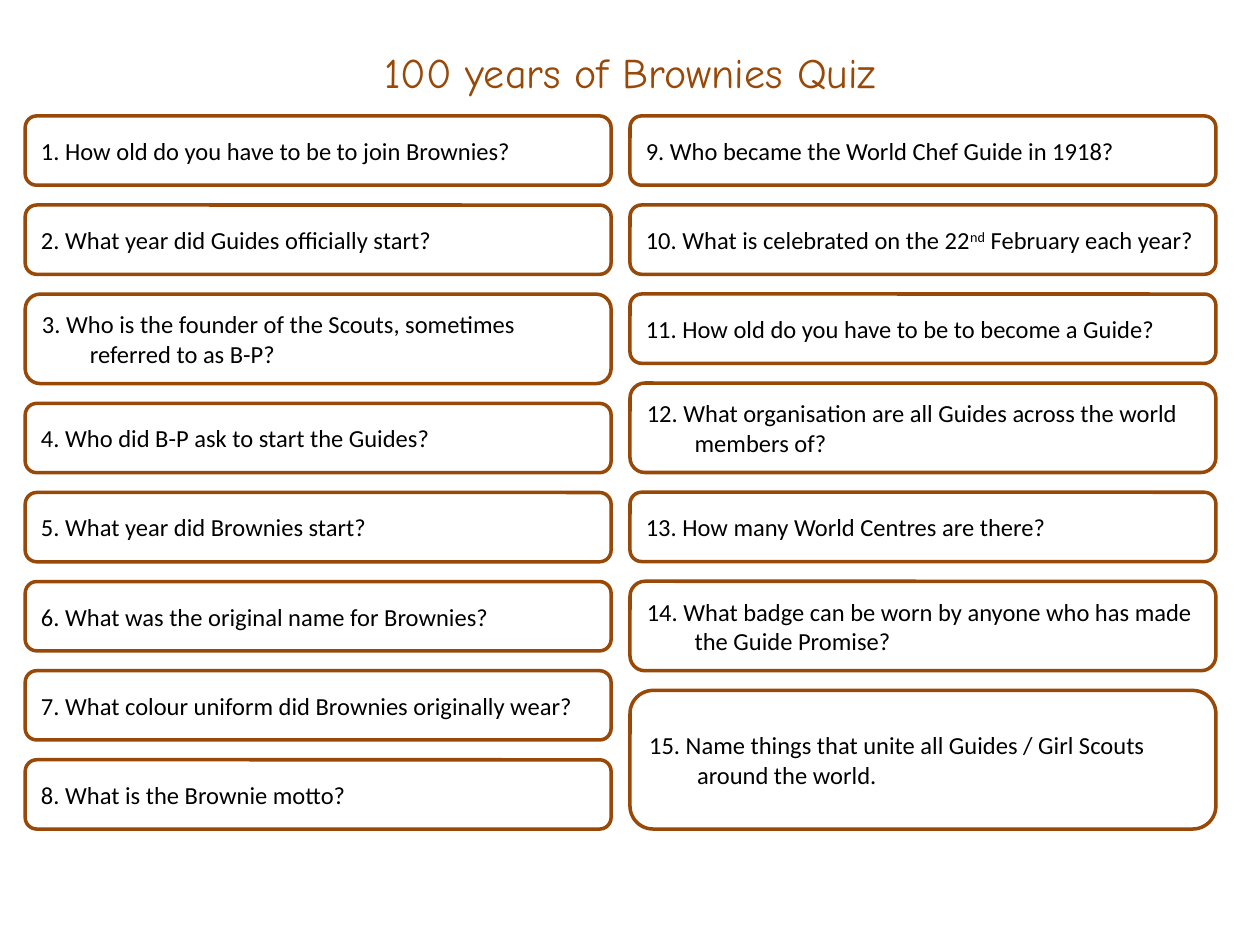
from pptx import Presentation
from pptx.dml.color import RGBColor
from pptx.enum.shapes import MSO_SHAPE as Shape
from pptx.enum.text import MSO_ANCHOR as Anchor, PP_ALIGN as Align
from pptx.util import Inches, Pt

BROWN = RGBColor(0x98, 0x48, 0x07)
BLACK = RGBColor(0, 0, 0)
TOP, BOTTOM, WIDTH = 0.92, 6.58, 4.65
ONE, TWO, TALL = 0.55, 0.71, 1.1

COLUMNS = [
    (0.2, [
        ("How old do you have to be to join Brownies?", ONE),
        ("What year did Guides officially start?", ONE),
        ("Who is the founder of the Scouts, sometimes referred to as B-P?", TWO),
        ("Who did B-P ask to start the Guides?", ONE),
        ("What year did Brownies start?", ONE),
        ("What was the original name for Brownies?", ONE),
        ("What colour uniform did Brownies originally wear?", ONE),
        ("What is the Brownie motto?", ONE),
    ]),
    (5, [
        ("Who became the World Chef Guide in 1918?", ONE),
        ("What is celebrated on the 22^nd^ February each year?", ONE),
        ("How old do you have to be to become a Guide?", ONE),
        ("What organisation are all Guides across the world members of?", TWO),
        ("How many World Centres are there?", ONE),
        ("What badge can be worn by anyone who has made the Guide Promise?", TWO),
        ("Name things that unite all Guides / Girl Scouts around the world.", TALL),
    ]),
]


def style(para, name, size, color, align):
    para.font.name = name
    para.font.size = Pt(size)
    para.font.color.rgb = color
    para.alignment = align


deck = Presentation()
deck.slide_width, deck.slide_height = Inches(10), Inches(7.5)
slide = deck.slides.add_slide(deck.slide_layouts[5])

title = slide.shapes.title
title.left, title.top = Inches(0.75), Inches(0.29)
title.width, title.height = Inches(8.5), Inches(0.55)
title.text_frame.text = "100 years of Brownies Quiz"
title.text_frame.vertical_anchor = Anchor.MIDDLE
style(title.text_frame.paragraphs[0], "Comic Neue", 24, BROWN, Align.CENTER)

number = 1
for left, quiz in COLUMNS:
    gap = (BOTTOM - TOP - sum(height for _, height in quiz)) / (len(quiz) - 1)
    top = TOP
    for text, height in quiz:
        box = slide.shapes.add_shape(Shape.ROUNDED_RECTANGLE, Inches(left), Inches(top),
                                     Inches(WIDTH), Inches(height))
        box.shadow.inherit = False
        box.fill.background()
        box.line.color.rgb = BROWN
        box.line.width = Pt(2)
        frame = box.text_frame
        frame.word_wrap = True
        frame.vertical_anchor = Anchor.MIDDLE
        para = frame.paragraphs[0]
        style(para, "Calibri", 14, BLACK, Align.LEFT)
        props = para._p.get_or_add_pPr()
        props.set("marL", str(Inches(0.38)))
        props.set("indent", str(Inches(-0.38)))
        for i, part in enumerate(f"{number}. {text}".split("^")):
            run = para.add_run()
            run.text = part
            if i % 2:
                run._r.get_or_add_rPr().set("baseline", "30000")
        top += height + gap
        number += 1

deck.save("out.pptx")
